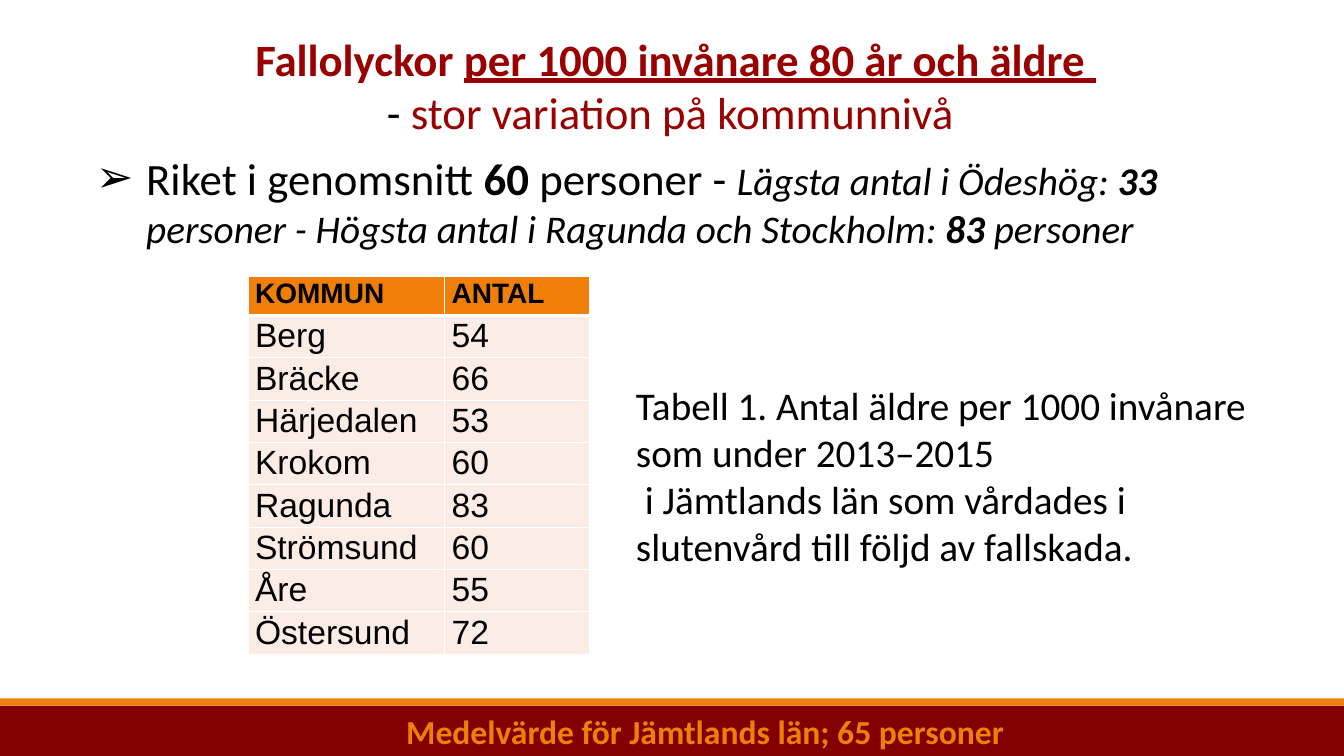
import dataclasses

import lxml.etree
import pptx
import pptx.dml.color
import pptx.enum.shapes
import pptx.enum.text
import pptx.oxml
import pptx.oxml.ns
import pptx.util

PX = 9144


@dataclasses.dataclass(frozen=True)
class Theme:
    """Colours, fonts and type sizes of the slide."""
    maroon: str = "820000"
    orange: str = "F07F09"
    red: str = "990000"
    black: str = "000000"
    white: str = "FFFFFF"
    blush: str = "FCECE6"
    font: str = "Calibri"
    table_font: str = "Arial"
    large: int = 32
    medium: int = 28
    small: int = 24
    header: int = 20


THEME = Theme()
MUNICIPALITIES = [("Berg", 54), ("Bräcke", 66), ("Härjedalen", 53), ("Krokom", 60),
                  ("Ragunda", 83), ("Strömsund", 60), ("Åre", 55), ("Östersund", 72)]


def rgb(colour):
    """Turn a hex string into a colour."""
    return pptx.dml.color.RGBColor.from_string(colour)


def box(*lengths):
    """Turn px lengths into EMU."""
    return [n * PX for n in lengths]


def add_run(p, text, size=THEME.large, colour=THEME.black, font=THEME.font,
            bold=False, italic=False, underline=False):
    """Append formatted text to a paragraph."""
    r = p.add_run()
    r.text = text
    r.font.name = font
    r.font.size = pptx.util.Pt(size)
    r.font.color.rgb = rgb(colour)
    r.font.bold, r.font.italic, r.font.underline = bold, italic, underline


def add_bar(s, top, height, colour):
    """Draw a full-width band."""
    sp = s.shapes.add_shape(pptx.enum.shapes.MSO_SHAPE.RECTANGLE, *box(0, top, 1333, height))
    sp.shadow.inherit = False
    sp.fill.solid()
    sp.fill.fore_color.rgb = rgb(colour)
    sp.line.fill.background()


def add_box(s, *lengths):
    """Add a wrapping text box and return its frame."""
    tf = s.shapes.add_textbox(*box(*lengths)).text_frame
    tf.word_wrap = True
    return tf


def place(sp, *lengths):
    """Move a placeholder and return its top-anchored frame."""
    sp.left, sp.top, sp.width, sp.height = box(*lengths)
    tf = sp.text_frame
    tf.auto_size = pptx.enum.text.MSO_AUTO_SIZE.NONE
    tf.vertical_anchor = pptx.enum.text.MSO_ANCHOR.TOP
    return tf


def fill_title(sp):
    """Write the two-line title."""
    tf = place(sp, 188, 26, 964, 118)
    p = tf.paragraphs[0]
    add_run(p, "Fallolyckor ", colour=THEME.red, bold=True)
    add_run(p, "per 1000 invånare 80 år och äldre ", colour=THEME.red, bold=True, underline=True)
    p = tf.add_paragraph()
    add_run(p, "- ")
    add_run(p, "stor variation på kommunnivå ", colour=THEME.red)
    for p in tf.paragraphs:
        p.alignment = pptx.enum.text.PP_ALIGN.CENTER


def set_bullet(p, char, indent):
    """Give a paragraph a hanging bullet."""
    pPr = p._p.get_or_add_pPr()
    pPr.set("marL", str(indent * PX))
    pPr.set("indent", str(-indent * PX))
    qn = pptx.oxml.ns.qn
    colour = lxml.etree.SubElement(pPr, qn("a:buClr"))
    lxml.etree.SubElement(colour, qn("a:srgbClr"), val=THEME.black)
    lxml.etree.SubElement(pPr, qn("a:buFont"), typeface=THEME.table_font)
    lxml.etree.SubElement(pPr, qn("a:buChar"), char=char)


def fill_body(sp):
    """Write the national average and its extremes."""
    p = place(sp, 85, 144, 1172, 111).paragraphs[0]
    p.space_before = pptx.util.Pt(0)
    set_bullet(p, "➢", 50)
    add_run(p, "Riket i genomsnitt ")
    add_run(p, "60", bold=True)
    add_run(p, " personer - ")
    for text, bold in [("Lägsta antal i Ödeshög: ", False), ("33 ", True),
                       ("personer - Högsta antal i Ragunda och Stockholm: ", False),
                       ("83", True), (" personer", False)]:
        add_run(p, text, size=THEME.medium, italic=True, bold=bold)


def set_borders(cell, **widths):
    """Draw white cell borders, widths in points by side."""
    tcPr = cell._tc.get_or_add_tcPr()
    qn = pptx.oxml.ns.qn
    for side in "LRTB":
        width = pptx.util.Pt(widths.get(side, 1))
        ln = lxml.etree.SubElement(tcPr, qn("a:ln" + side), w=str(int(width)))
        fill = lxml.etree.SubElement(ln, qn("a:solidFill"))
        lxml.etree.SubElement(fill, qn("a:srgbClr"), val=THEME.white)


def fill_cell(cell, text, colour, borders, **fmt):
    """Write and style one table cell."""
    cell.margin_left = cell.margin_right = 7 * PX
    cell.margin_top = cell.margin_bottom = 0
    set_borders(cell, **borders)
    cell.fill.solid()
    cell.fill.fore_color.rgb = rgb(colour)
    p = cell.text_frame.paragraphs[0]
    p.line_spacing = 1.05
    add_run(p, text, font=THEME.table_font, **fmt)


def add_counts(s):
    """Add the table of counts by municipality."""
    rows = [("KOMMUN", "ANTAL")] + MUNICIPALITIES
    table = s.shapes.add_table(len(rows), 2, *box(246, 274, 339, 39 * len(rows))).table
    for column, width in zip(table.columns, (195, 144)):
        column.width = width * PX
    for i, row in enumerate(rows):
        for j, value in enumerate(row):
            cell = table.cell(i, j)
            if i == 0:
                fill_cell(cell, value, THEME.orange, {"B": 3}, size=THEME.header, bold=True)
            else:
                borders = {"T": 3} if i == 1 else {}
                fill_cell(cell, str(value), THEME.blush, borders, size=THEME.small)


def add_caption(s):
    """Add the table caption."""
    tf = add_box(s, 621, 372, 636, 229)
    tf.vertical_anchor = pptx.enum.text.MSO_ANCHOR.MIDDLE
    tf.margin_bottom = 35 * PX
    add_run(tf.paragraphs[0], "Tabell 1. Antal äldre per 1000 invånare som under 2013–2015",
            size=THEME.medium)
    add_run(tf.add_paragraph(),
            " i Jämtlands län som vårdades i slutenvård till följd av fallskada.",
            size=THEME.medium)


def main():
    """Build the slide and save it."""
    prs = pptx.Presentation()
    prs.slide_width, prs.slide_height = box(1333, 750)
    s = prs.slides.add_slide(prs.slide_layouts[1])
    add_bar(s, 700, 50, THEME.maroon)
    add_bar(s, 693, 7, THEME.orange)
    fill_title(s.shapes.title)
    fill_body(s.placeholders[1])
    tf = add_box(s, 393, 700, 627, 50)
    add_run(tf.paragraphs[0], "Medelvärde för Jämtlands län; 65 personer",
            size=THEME.small, colour=THEME.orange, bold=True)
    add_counts(s)
    add_caption(s)
    prs.save("out.pptx")


if __name__ == "__main__":
    main()
